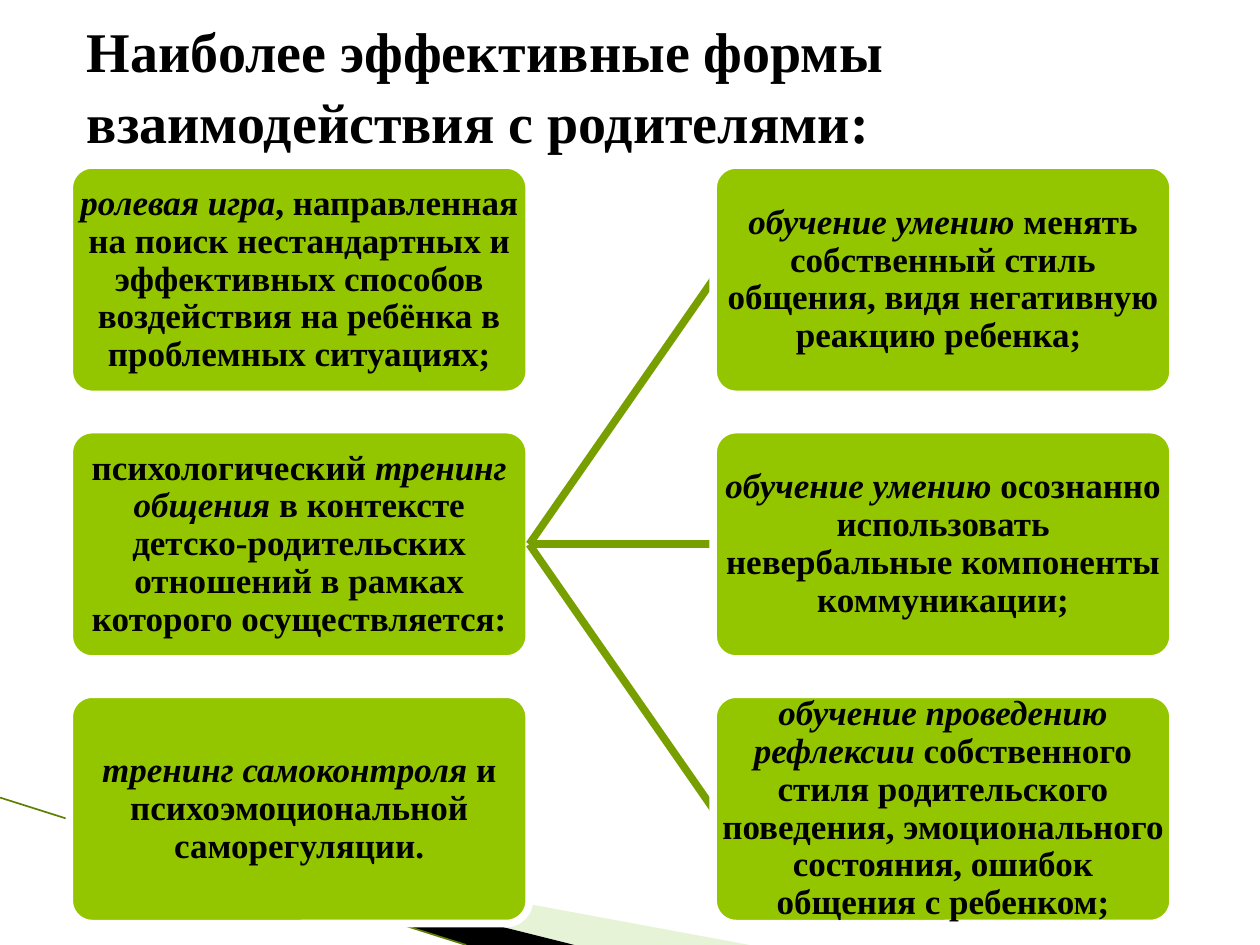
from lxml.etree import SubElement
from pptx import Presentation
from pptx.dml.color import RGBColor
from pptx.enum.shapes import MSO_CONNECTOR as LINK, MSO_SHAPE as SHAPE
from pptx.enum.text import MSO_ANCHOR as ANCHOR, MSO_AUTO_SIZE as FIT, PP_ALIGN as ALIGN
from pptx.oxml.ns import qn
from pptx.util import Inches, Pt

FONT = "Times New Roman"
BLACK, GREEN, OLIVE, WHITE = "000000", "94C600", "779F00", "FFFFFF"
WIDE, HIGH = 3.65, 1.82
LEFT, TOP, COL, ROW = 0.55, 1.31, 5.11, 2.1

# Each box is a list of (text, italic) runs.
FORMS = [
    [("ролевая игра", True),
     (", направленная на поиск нестандартных и эффективных способов "
      "воздействия на ребёнка в проблемных ситуациях;", False)],
    [("психологический ", False), ("тренинг общения ", True),
     ("в контексте детско-родительских отношений в рамках которого "
      "осуществляется:", False)],
    [("тренинг самоконтроля", True),
     (" и психоэмоциональной саморегуляции.", False)],
]
SKILLS = [
    [("обучение умению ", True),
     ("менять собственный стиль общения, видя негативную реакцию ребенка; ", False)],
    [("обучение умению ", True),
     ("осознанно использовать невербальные компоненты коммуникации;", False)],
    [("обучение проведению рефлексии", True),
     (" собственного стиля родительского поведения, эмоционального состояния, "
      "ошибок общения с ребенком;", False)],
]


def color(code):
    return RGBColor.from_string(code)


def style(para, size):
    font = para.font
    font.name, font.size, font.bold = FONT, Pt(size), True
    font.color.rgb = color(BLACK)


def add_wedge(slide, points, code, alpha=100):
    start, *rest = [(Inches(x), Inches(y)) for x, y in points]
    pen = slide.shapes.build_freeform(*start)
    pen.add_line_segments(rest)
    wedge = pen.convert_to_shape()
    wedge.shadow.inherit = False
    wedge.fill.solid()
    wedge.fill.fore_color.rgb = color(code)
    wedge.line.fill.background()
    if alpha < 100:
        tint = wedge.fill._xPr.find(qn("a:solidFill"))[0]
        SubElement(tint, qn("a:alpha"), val=str(alpha * 1000))


def add_line(slide, start, end, code, width):
    line = slide.shapes.add_connector(
        LINK.STRAIGHT, *[Inches(v) for v in (*start, *end)])
    line.line.color.rgb = color(code)
    line.line.width = Pt(width)
    SubElement(line._element.spPr, qn("a:effectLst"))


def add_box(slide, col, row, runs):
    box = slide.shapes.add_shape(
        SHAPE.ROUNDED_RECTANGLE, Inches(LEFT + col * COL),
        Inches(TOP + row * ROW), Inches(WIDE), Inches(HIGH))
    box.adjustments[0] = 0.1
    box.shadow.inherit = False
    box.fill.solid()
    box.fill.fore_color.rgb = color(GREEN)
    box.line.color.rgb = color(WHITE)
    box.line.width = Pt(4.33)
    frame = box.text_frame
    frame.word_wrap = True
    frame.vertical_anchor = ANCHOR.MIDDLE
    # The rounded corners already inset the text by 0.05 inch.
    frame.margin_left = frame.margin_right = Inches(0.01)
    frame.margin_top = frame.margin_bottom = Inches(0.01)
    para = frame.paragraphs[0]
    para.alignment = ALIGN.CENTER
    para.line_spacing = 0.9
    style(para, 20)
    for text, slant in runs:
        run = para.add_run()
        run.text = text
        run.font.italic = slant


def set_title(slide, text):
    title = slide.shapes.title
    title.left, title.top = Inches(0.59), Inches(0.04)
    title.width, title.height = Inches(9), Inches(1.25)
    frame = title.text_frame
    frame.text = text
    frame.auto_size = FIT.NONE
    frame.vertical_anchor = ANCHOR.MIDDLE
    para = frame.paragraphs[0]
    para.alignment = ALIGN.LEFT
    para.line_spacing = 1.05
    style(para, 32)


def main():
    deck = Presentation()
    deck.slide_width, deck.slide_height = Inches(10), Inches(7.5)
    slide = deck.slides.add_slide(deck.slide_layouts[5])
    set_title(slide, "Наиболее эффективные формы взаимодействия с родителями:")

    add_wedge(slide, [(0.55, 6.5), (5.95, 7.5), (4.56, 7.5)], "C3E19D", 40)
    add_wedge(slide, [(0.53, 6.49), (4.56, 7.5), (3.7, 7.5)], BLACK)
    add_line(slide, (0, 6.33), (3.7, 7.5), "5F7F00", 0.95)

    for row, runs in enumerate(FORMS):
        add_box(slide, 0, row, runs)
    mid = TOP + HIGH / 2
    for row in range(len(SKILLS)):
        add_line(slide, (LEFT + WIDE, mid + ROW),
                 (LEFT + COL, mid + row * ROW), OLIVE, 4.33)
    for row, runs in enumerate(SKILLS):
        add_box(slide, 1, row, runs)

    deck.save("out.pptx")


if __name__ == "__main__":
    main()
